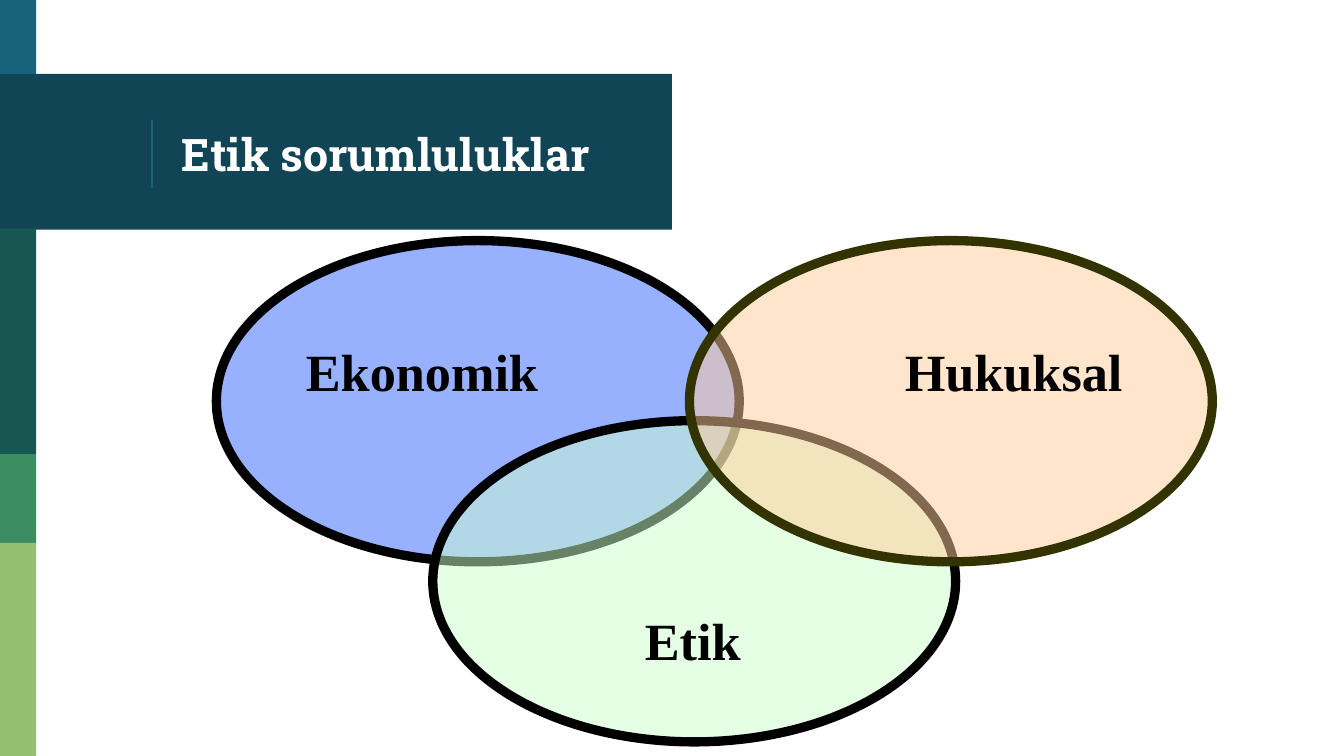
from dataclasses import dataclass

from lxml.etree import SubElement
from pptx import Presentation
from pptx.dml.color import RGBColor
from pptx.enum.shapes import MSO_CONNECTOR, MSO_SHAPE
from pptx.enum.text import MSO_ANCHOR, PP_ALIGN
from pptx.oxml.ns import qn
from pptx.util import Inches, Pt


@dataclass(frozen=True)
class Theme:
    blue: str = "18637B"
    navy: str = "114454"
    teal: str = "165751"
    green: str = "3B8D61"
    lime: str = "94BF6E"
    white: str = "FFFFFF"
    black: str = "000000"
    olive: str = "333300"
    economic: str = "3366FF"
    ethical: str = "CCFFCC"
    legal: str = "FFCC99"
    title_font: str = "Roboto Slab"
    label_font: str = "Times New Roman"
    title_size: int = 24
    label_size: int = 28
    outline: int = 5
    opacity: int = 51


@dataclass(frozen=True)
class Bar:
    top: float
    width: float
    height: float
    color: str


@dataclass(frozen=True)
class Oval:
    label: str
    left: float
    top: float
    fill: str
    line: str
    align: PP_ALIGN
    margins: tuple[float, float, float, float]


T = Theme()
STRIP_W = 0.27
OVAL_W, OVAL_H = 3.89, 2.39
OVAL_LEFT, OVAL_STEP = 1.61, 1.76
UPPER, LOWER = 1.79, 3.13

BARS = [
    Bar(0, STRIP_W, 0.58, T.blue),
    Bar(0.55, 5, 1.16, T.navy),
    Bar(1.7, STRIP_W, 1.68, T.teal),
    Bar(3.38, STRIP_W, 0.66, T.green),
    Bar(4.04, STRIP_W, 1.59, T.lime),
]

OVALS = [
    Oval("Ekonomik", OVAL_LEFT, UPPER, T.economic, T.black,
         PP_ALIGN.CENTER, (0, 0, 0.83, 0.46)),
    Oval("Etik", 3.22, LOWER, T.ethical, T.black,
         PP_ALIGN.CENTER, (0.1, 0.87, 0.12, 0)),
    Oval("Hukuksal", OVAL_LEFT + 2 * OVAL_STEP, UPPER, T.legal, T.olive,
         PP_ALIGN.RIGHT, (0.1, 0, 0.1, 0.46)),
]


def rgb(color: str) -> RGBColor:
    return RGBColor.from_string(color)


def set_text(tf, text: str, font: str, size: int, color: str,
             align: PP_ALIGN, margins: tuple[float, float, float, float]) -> None:
    tf.text = text
    tf.word_wrap = True
    tf.vertical_anchor = MSO_ANCHOR.MIDDLE
    tf.margin_left, tf.margin_top, tf.margin_right, tf.margin_bottom = map(Inches, margins)
    p = tf.paragraphs[0]
    p.alignment = align
    f = p.runs[0].font
    f.name, f.size, f.bold = font, Pt(size), True
    f.color.rgb = rgb(color)


def add_filled(s, kind: MSO_SHAPE, left: float, top: float,
               width: float, height: float, color: str):
    sp = s.shapes.add_shape(kind, Inches(left), Inches(top), Inches(width), Inches(height))
    sp.shadow.inherit = False
    sp.fill.solid()
    sp.fill.fore_color.rgb = rgb(color)
    sp.line.fill.background()
    return sp


def add_bar(s, bar: Bar) -> None:
    add_filled(s, MSO_SHAPE.RECTANGLE, 0, bar.top, bar.width, bar.height, bar.color)


def add_rule(s, x: float, top: float, bottom: float) -> None:
    line = s.shapes.add_connector(MSO_CONNECTOR.STRAIGHT, Inches(x), Inches(top),
                                  Inches(x), Inches(bottom))
    line.line.color.rgb = rgb(T.blue)
    line.line.width = Pt(0.75)
    SubElement(line._element.spPr, qn("a:effectLst"))


def add_title(s, text: str) -> None:
    sp = s.shapes.title
    s.shapes._spTree.append(sp._element)
    sp.left, sp.top, sp.width, sp.height = map(Inches, (1.25, 0.58, 3.51, 1.12))
    set_text(sp.text_frame, text, T.title_font, T.title_size, T.white,
             PP_ALIGN.LEFT, (0.1, 0.1, 0.1, 0.1))


def add_oval(s, oval: Oval) -> None:
    sp = add_filled(s, MSO_SHAPE.OVAL, oval.left, oval.top, OVAL_W, OVAL_H, oval.fill)
    clr = sp._element.spPr.find(qn("a:solidFill")).find(qn("a:srgbClr"))
    SubElement(clr, qn("a:alpha")).set("val", str(T.opacity * 1000))
    sp.line.color.rgb = rgb(oval.line)
    sp.line.width = Pt(T.outline)
    set_text(sp.text_frame, oval.label, T.label_font, T.label_size, T.black,
             oval.align, oval.margins)


def main() -> None:
    prs = Presentation()
    prs.slide_width = Inches(10)
    prs.slide_height = prs.slide_width * 9 // 16
    s = prs.slides.add_slide(prs.slide_layouts[5])
    for bar in BARS:
        add_bar(s, bar)
    add_rule(s, 1.13, 0.89, 1.4)
    add_title(s, "Etik sorumluluklar")
    for oval in OVALS:
        add_oval(s, oval)
    prs.save("out.pptx")


if __name__ == "__main__":
    main()
